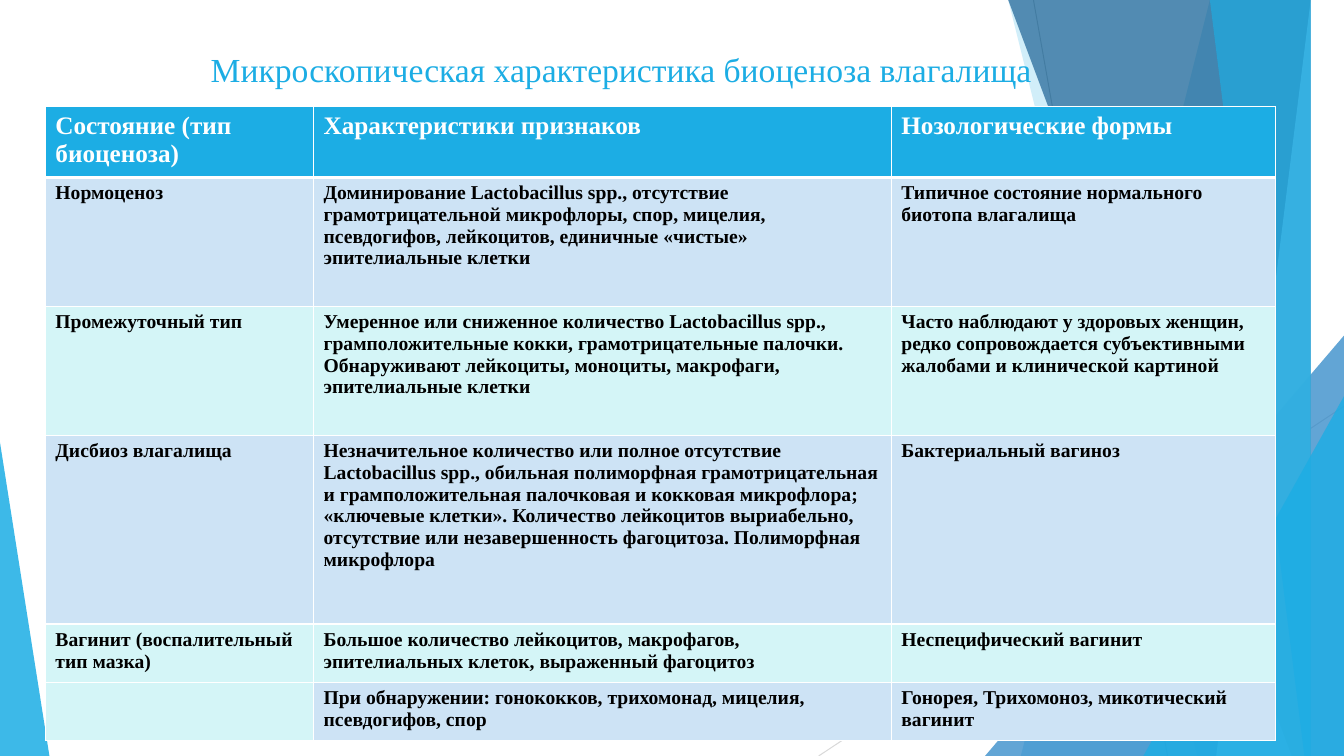
import lxml.etree
import pptx
import pptx.dml.color
import pptx.enum.shapes
import pptx.enum.text
import pptx.oxml.ns
import pptx.util

Inches = pptx.util.Inches
Pt = pptx.util.Pt
RGBColor = pptx.dml.color.RGBColor
qn = pptx.oxml.ns.qn

WIDTH, HEIGHT = 13.33, 7.5
FONT = "Times New Roman"
WHITE = RGBColor(0xFF, 0xFF, 0xFF)
BLACK = RGBColor(0, 0, 0)
SKY = RGBColor(0x1C, 0xAD, 0xE4)
BLUE = RGBColor(0x26, 0x83, 0xC6)
NAVY = RGBColor(0x1D, 0x62, 0x94)
PALE_SKY = RGBColor(0x77, 0xCE, 0xEF)
BAND_BLUE = RGBColor(0xCD, 0xE3, 0xF5)
BAND_MINT = RGBColor(0xD4, 0xF5, 0xF7)
GREY = RGBColor(0xBF, 0xBF, 0xBF)
LIGHT_GREY = RGBColor(0xD9, 0xD9, 0xD9)

COLUMN_WIDTHS = [2.66, 5.73, 3.81]
ROW_HEIGHTS = [0.58, 1.28, 1.28, 1.87, 0.58, 0.58]
ROWS = [
    ("Состояние (тип биоценоза)", "Характеристики признаков", "Нозологические формы"),
    ("Нормоценоз",
     "Доминирование Lactobacillus spp., отсутствие грамотрицательной микрофлоры, спор, "
     "мицелия, псевдогифов, лейкоцитов, единичные «чистые» эпителиальные клетки",
     "Типичное состояние нормального биотопа влагалища"),
    ("Промежуточный тип",
     "Умеренное или сниженное количество Lactobacillus spp., грамположительные кокки, "
     "грамотрицательные палочки. Обнаруживают лейкоциты, моноциты, макрофаги, "
     "эпителиальные клетки",
     "Часто наблюдают у здоровых женщин, редко сопровождается субъективными жалобами "
     "и клинической картиной"),
    ("Дисбиоз влагалища",
     "Незначительное количество или полное отсутствие Lactobacillus spp., обильная "
     "полиморфная грамотрицательная и грамположительная палочковая и кокковая микрофлора; "
     "«ключевые клетки». Количество лейкоцитов выриабельно, отсутствие или "
     "незавершенность фагоцитоза. Полиморфная микрофлора",
     "Бактериальный вагиноз"),
    ("Вагинит (воспалительный тип мазка)",
     "Большое количество лейкоцитов, макрофагов, эпителиальных клеток, выраженный фагоцитоз",
     "Неспецифический вагинит"),
    ("",
     "При обнаружении: гонококков, трихомонад, мицелия, псевдогифов, спор",
     "Гонорея, Трихомоноз, микотический вагинит"),
]


def paint(shape, color, opacity):
    shape.shadow.inherit = False
    shape.fill.solid()
    shape.fill.fore_color.rgb = color
    shape.line.fill.background()
    swatch = shape.element.spPr.find(".//" + qn("a:srgbClr"))
    lxml.etree.SubElement(swatch, qn("a:alpha"), val=str(opacity * 1000))


def add_ray(page, start, end, color):
    ray = page.shapes.add_connector(
        pptx.enum.shapes.MSO_CONNECTOR.STRAIGHT, *map(Inches, start + end))
    ray.line.color.rgb = color
    ray.line.width = Pt(0.75)
    lxml.etree.SubElement(ray.element.spPr, qn("a:effectLst"))


def add_blade(page, box, top_x, bottom_x, color, opacity):
    left, top, width, height = box
    right, bottom = left + width, top + height
    builder = page.shapes.build_freeform(top_x, top, scale=Inches(1))
    builder.add_line_segments([(right, top), (right, bottom), (bottom_x, bottom)], close=True)
    paint(builder.convert_to_shape(), color, opacity)


def add_wedge(page, box, apex, color, opacity):
    wedge = page.shapes.add_shape(
        pptx.enum.shapes.MSO_SHAPE.ISOSCELES_TRIANGLE, *map(Inches, box))
    wedge.adjustments[0] = apex
    paint(wedge, color, opacity)


def add_backdrop(page, box):
    left, top, width, height = box
    right, bottom = left + width, top + height
    add_ray(page, (right - 3.08, top), (right - 1.75, bottom), GREY)
    add_ray(page, (right, top + 4.03), (right - 5.21, bottom), LIGHT_GREY)
    add_blade(page, box, right - 1.05, right - 3.29, SKY, 30)
    add_blade(page, box, right - 2.83, right - 1.5, SKY, 20)
    add_wedge(page, (right - 3.56, bottom - 4.17, 3.56, 4.17), 1, BLUE, 72)
    add_blade(page, box, right - 3.12, right - 0.42, NAVY, 70)
    add_blade(page, box, right - 0.3, right - 1.41, PALE_SKY, 70)
    add_blade(page, box, right - 1.37, right - 0.15, SKY, 65)
    add_wedge(page, (right - 1.99, bottom - 3.57, 1.99, 3.57), 1, SKY, 80)
    add_wedge(page, (left, bottom - 3.11, 0.49, 3.11), 0, SKY, 85)


def style_font(font, size, color, bold):
    font.name = FONT
    font.size = Pt(size)
    font.color.rgb = color
    font.bold = bold


def add_title(page, box):
    frame = page.shapes.add_textbox(*map(Inches, box)).text_frame
    frame.word_wrap = True
    frame.vertical_anchor = pptx.enum.text.MSO_ANCHOR.MIDDLE
    frame.margin_left = Inches(1.35)
    para = frame.paragraphs[0]
    para.text = "Микроскопическая характеристика биоценоза влагалища"
    style_font(para.font, 24, SKY, False)


def add_borders(cell, top, bottom):
    properties = cell._tc.get_or_add_tcPr()
    for side, width in (("L", 1), ("R", 1), ("T", top), ("B", bottom)):
        line = lxml.etree.SubElement(properties, qn("a:ln" + side), w=str(Pt(width)))
        fill = lxml.etree.SubElement(line, qn("a:solidFill"))
        lxml.etree.SubElement(fill, qn("a:srgbClr"), val=str(WHITE))


def cell_color(row, column):
    if row == 0:
        return SKY
    if row % 2 == 0 or (row, column) == (len(ROWS) - 1, 0):
        return BAND_MINT
    return BAND_BLUE


def add_biocenosis_table(page, box):
    table = page.shapes.add_table(
        len(ROWS), len(COLUMN_WIDTHS), *map(Inches, box)).table
    for column, width in zip(table.columns, COLUMN_WIDTHS):
        column.width = Inches(width)
    for row, height in zip(table.rows, ROW_HEIGHTS):
        row.height = Inches(height)
    for row, texts in enumerate(ROWS):
        for column, text in enumerate(texts):
            cell = table.cell(row, column)
            add_borders(cell, 3 if row == 1 else 1, 3 if row == 0 else 1)
            cell.fill.solid()
            cell.fill.fore_color.rgb = cell_color(row, column)
            cell.text = text
            size, color = (18, WHITE) if row == 0 else (14, BLACK)
            style_font(cell.text_frame.paragraphs[0].font, size, color, True)


def main():
    deck = pptx.Presentation()
    deck.slide_width, deck.slide_height = Inches(WIDTH), Inches(HEIGHT)
    page = deck.slides.add_slide(deck.slide_layouts[6])
    add_backdrop(page, (0, 0, WIDTH, HEIGHT))
    add_title(page, (0.74, 0.42, 10.5, 0.54))
    add_biocenosis_table(page, (0.45, 1.06, sum(COLUMN_WIDTHS), sum(ROW_HEIGHTS)))
    deck.save("out.pptx")


if __name__ == "__main__":
    main()
